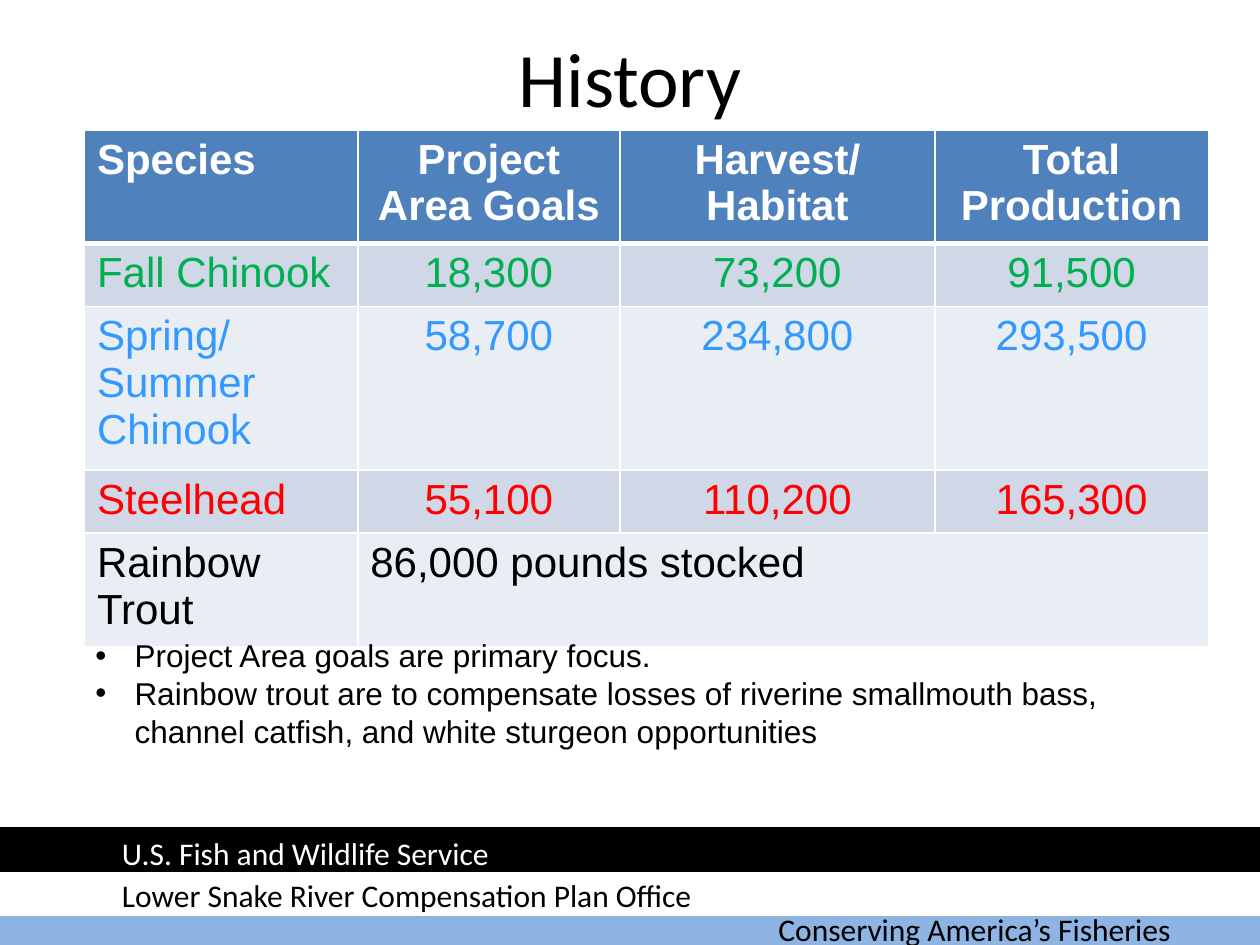
import dataclasses
import pptx
import pptx.dml.color
import pptx.enum.shapes
import pptx.enum.text
import pptx.oxml
import pptx.oxml.ns
import pptx.util

IN = pptx.util.Inches
ALIGN = pptx.enum.text.PP_ALIGN
ANCHOR = pptx.enum.text.MSO_ANCHOR
W, H = 10, 7.5


@dataclasses.dataclass(frozen=True)
class Theme:
    """Colours, fonts and type sizes of the slide."""
    black: str = "000000"
    white: str = "FFFFFF"
    sky: str = "8EB4E3"
    header: str = "4F81BD"
    bands: tuple = ("D0D8E8", "E9EDF4")
    green: str = "00B050"
    blue: str = "3399FF"
    red: str = "FF0000"
    heading: str = "Calibri"
    body: str = "Arial"
    title_size: int = 44
    table_size: int = 24
    text_size: int = 18


T = Theme()
COLUMNS = (2.17, 2.08, 2.5, 2.17)
ROWS = (0.42, 0.41, 0.7, 0.41, 0.41)
CELLS = (
    (T.white, ("Species", "Project Area Goals", "Harvest/Habitat", "Total Production")),
    (T.green, ("Fall Chinook", "18,300", "73,200", "91,500")),
    (T.blue, ("Spring/Summer Chinook", "58,700", "234,800", "293,500")),
    (T.red, ("Steelhead", "55,100", "110,200", "165,300")),
    (T.black, ("Rainbow Trout", "86,000 pounds stocked")),
)
NOTES = (
    "Project Area goals are primary focus.",
    "Rainbow trout are to compensate losses of riverine smallmouth bass, "
    "channel catfish, and white sturgeon opportunities",
)


def rgb(value):
    """Return a colour from its hex string."""
    return pptx.dml.color.RGBColor.from_string(value)


def add_run(p, text, font, size, color, bold=False):
    """Append one styled run to a paragraph."""
    r = p.add_run()
    r.text = text
    r.font.name, r.font.size, r.font.bold = font, pptx.util.Pt(size), bold
    r.font.color.rgb = rgb(color)


def add_band(s, left, top, color):
    """Draw a full-width footer band."""
    sp = s.shapes.add_shape(pptx.enum.shapes.MSO_SHAPE.RECTANGLE,
                            IN(left), IN(top), IN(W), IN(0.33))
    sp.shadow.inherit = False
    sp.fill.solid()
    sp.fill.fore_color.rgb = sp.line.color.rgb = rgb(color)
    sp.line.width = pptx.util.Pt(2)


def add_text(s, box, lines, font, size, color, align=ALIGN.LEFT, anchor=ANCHOR.TOP, bullet=False):
    """Add a text box with one paragraph per line."""
    tf = s.shapes.add_textbox(*map(IN, box)).text_frame
    tf.word_wrap = True
    tf.vertical_anchor = anchor
    for i, line in enumerate(lines):
        p = tf.add_paragraph() if i else tf.paragraphs[0]
        p.alignment = align
        if bullet:
            add_bullet(p)
        add_run(p, line, font, size, color)


def add_bullet(p):
    """Give a paragraph a hanging round bullet."""
    pPr = p._p.get_or_add_pPr()
    pPr.set("marL", str(IN(0.31)))
    pPr.set("indent", str(-IN(0.31)))
    for tag, attr, value in (("buFont", "typeface", T.body), ("buChar", "char", "•")):
        pptx.oxml.ns.qn("a:" + tag)
        pPr.append(pptx.oxml.parse_xml(
            f'<a:{tag} {pptx.oxml.ns.nsdecls("a")} {attr}="{value}"/>'))


def set_borders(cell, row):
    """Rule a cell in white, with a heavier line below the header."""
    tcPr = cell._tc.get_or_add_tcPr()
    widths = {"L": 1, "R": 1, "T": 3 if row == 1 else 1, "B": 3 if row == 0 else 1}
    for i, (side, width) in enumerate(widths.items()):
        tcPr.insert(i, pptx.oxml.parse_xml(
            f'<a:ln{side} {pptx.oxml.ns.nsdecls("a")} w="{pptx.util.Pt(width)}"><a:solidFill>'
            f'<a:srgbClr val="{T.white}"/></a:solidFill></a:ln{side}>'))


def add_goals_table(s):
    """Add the table of species goals."""
    frame = s.shapes.add_table(len(ROWS), len(COLUMNS), IN(0.67), IN(1.03), IN(8.92), IN(3.7))
    table = frame.table
    for column, width in zip(table.columns, COLUMNS):
        column.width = IN(width)
    for row, height in zip(table.rows, ROWS):
        row.height = IN(height)
    frame.height = IN(3.7)
    last = len(ROWS) - 1
    table.cell(last, 1).merge(table.cell(last, len(COLUMNS) - 1))
    for i, (color, texts) in enumerate(CELLS):
        for j in range(len(COLUMNS)):
            cell = table.cell(i, j)
            cell.fill.solid()
            cell.fill.fore_color.rgb = rgb(T.bands[(i - 1) % 2] if i else T.header)
            set_borders(cell, i)
            if j < len(texts):
                p = cell.text_frame.paragraphs[0]
                p.alignment = ALIGN.CENTER if j and i < last else ALIGN.LEFT
                add_run(p, texts[j], T.body, T.table_size, color, i == 0)


def main():
    """Build and save the slide."""
    prs = pptx.Presentation()
    prs.slide_width, prs.slide_height = IN(W), IN(H)
    s = prs.slides.add_slide(prs.slide_layouts[6])
    for left, top, color in ((-0.01, 7.17, T.sky), (0, 6.93, T.white), (0, 6.58, T.black)):
        add_band(s, left, top, color)
    for box, text, color in (
        ((6.08, 7.17, 3.67, 0.4), "Conserving America’s Fisheries", T.black),
        ((0.87, 6.57, 4.16, 0.4), "U.S. Fish and Wildlife Service", T.white),
        ((0.87, 6.9, 4.97, 0.4), "Lower Snake River Compensation Plan Office", T.black),
    ):
        add_text(s, box, [text], T.heading, T.text_size, color)
    add_text(s, (0.5, 0.17, 9, 0.87), ["History"], T.heading, T.title_size, T.black,
             ALIGN.CENTER, ANCHOR.MIDDLE)
    add_goals_table(s)
    add_text(s, (0.66, 5, 8.83, 1.01), NOTES, T.body, T.text_size, T.black, bullet=True)
    prs.save("out.pptx")


if __name__ == "__main__":
    main()
